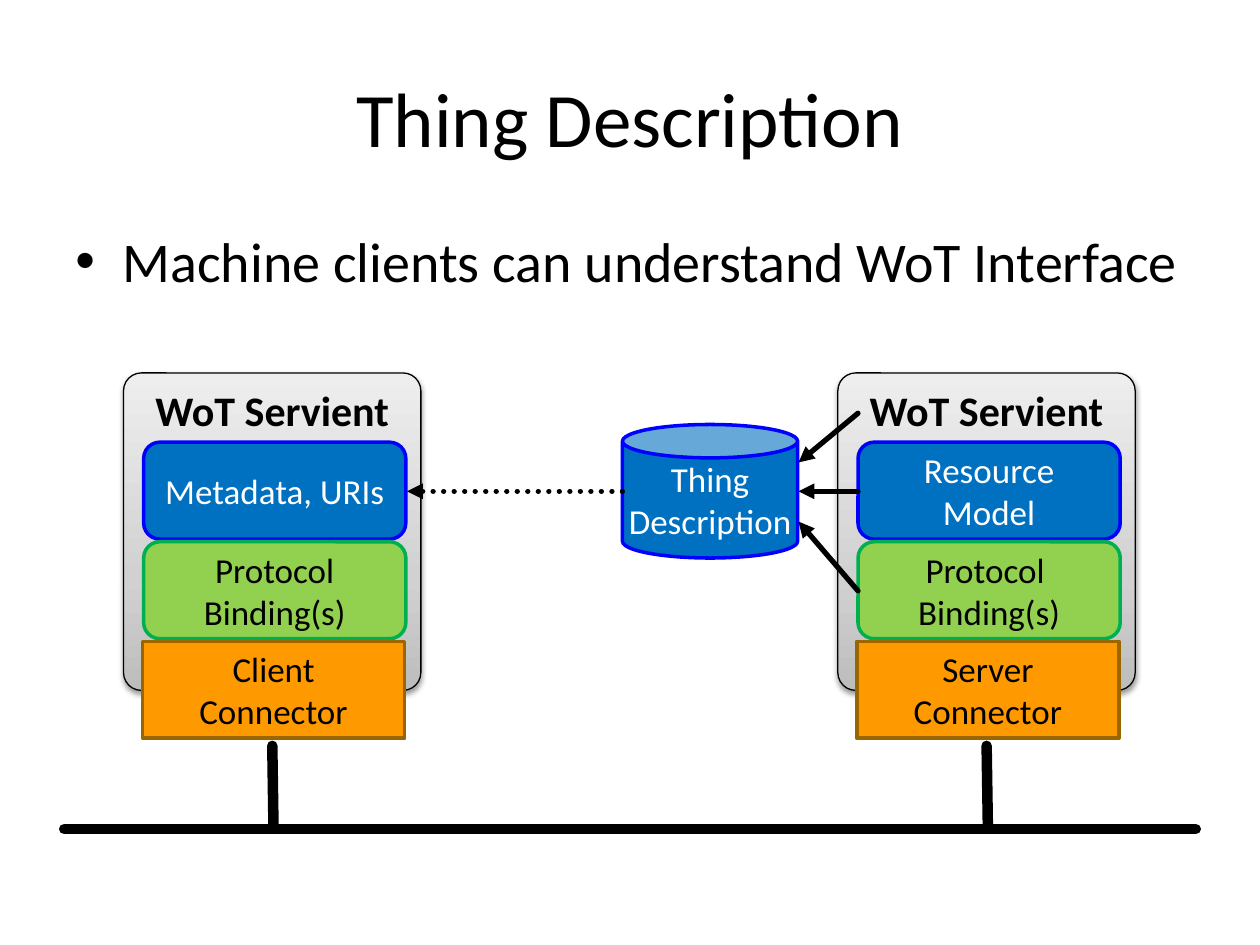
import pptx
import pptx.util
from pptx.dml.color import RGBColor
from pptx.enum.dml import MSO_LINE
from pptx.enum.shapes import MSO_CONNECTOR, MSO_SHAPE
from pptx.enum.text import MSO_ANCHOR, PP_ALIGN
from pptx.oxml import parse_xml
from pptx.oxml.ns import nsdecls
from lxml import etree

Pt = pptx.util.Pt
COLORS = {
    "black": "000000", "white": "FFFFFF",
    "blue": "0070C0", "blue_edge": "0000FF",
    "green": "92D050", "green_edge": "00B050",
    "orange": "FF9900", "orange_edge": "996600",
    "gray_dark": "BDBDBD", "gray_mid": "D1D1D1", "gray_light": "EEEEEE",
}
GRAY_STOPS = ((0, "gray_dark"), (35, "gray_mid"), (100, "gray_light"))
CENTER = PP_ALIGN.CENTER
LAYER_TOP, LAYER_PITCH, LAYER_HEIGHT, LAYER_WIDTH = 39.6, 56.9, 55.4, 149.8


def color(name):
    return RGBColor.from_string(COLORS[name])


def write(shape, text, size, ink="black", align=CENTER, anchor=MSO_ANCHOR.MIDDLE,
          wrap=True, bold=False):
    frame = shape.text_frame
    frame.text = text
    frame.word_wrap = wrap
    frame.vertical_anchor = anchor
    for para in frame.paragraphs:
        para.alignment = align
        for span in para.runs:
            formats = {"name": "Calibri", "size": Pt(size), "bold": bold}
            for key, value in formats.items():
                setattr(span.font, key, value)
            span.font.color.rgb = color(ink)


def add_block(page, kind, box, fill, edge, width=2):
    """Add an outlined shape; a fill of None leaves the fill to the caller."""
    shape = page.shapes.add_shape(kind, *map(Pt, box))
    shape.shadow.inherit = False
    if fill:
        shape.fill.solid()
        shape.fill.fore_color.rgb = color(fill)
    shape.line.color.rgb = color(edge)
    shape.line.width = Pt(width)
    return shape


def add_line(page, start, end, width, arrow=False, dash=None):
    line = page.shapes.add_connector(MSO_CONNECTOR.STRAIGHT, *map(Pt, start + end))
    line.line.color.rgb = color("black")
    line.line.width = Pt(width)
    if dash:
        line.line.dash_style = dash
    stroke = line.line._get_or_add_ln()
    stroke.set("cap", "rnd")
    if arrow:
        stroke.append(parse_xml(f'<a:tailEnd {nsdecls("a")} type="triangle"/>'))
    line._element.spPr.append(parse_xml(f'<a:effectLst {nsdecls("a")}/>'))


def add_gray_gradient_and_shadow(shape):
    stops = "".join(f'<a:gs pos="{place * 1000}"><a:srgbClr val="{COLORS[name]}"/></a:gs>'
                    for place, name in GRAY_STOPS)
    properties = shape._element.spPr
    properties.find("{*}prstGeom").addnext(parse_xml(
        f'<a:gradFill {nsdecls("a")} rotWithShape="1"><a:gsLst>{stops}</a:gsLst>'
        '<a:lin ang="16200000" scaled="0"/></a:gradFill>'))
    properties.find("{*}effectLst").append(parse_xml(
        f'<a:outerShdw {nsdecls("a")} blurRad="{Pt(3.1)}" dist="{Pt(1.6)}" dir="5400000" '
        f'rotWithShape="0"><a:srgbClr val="{COLORS["black"]}"><a:alpha val="38000"/>'
        '</a:srgbClr></a:outerShdw>'))


def add_heading(page, box):
    title = page.shapes.title
    for key, value in zip(("left", "top", "width", "height"), box):
        setattr(title, key, Pt(value))
    write(title, "Thing Description", 44)


def add_bullet(page, box):
    body = page.shapes.add_textbox(*map(Pt, box))
    write(body, "Machine clients can understand WoT Interface", 32,
          align=PP_ALIGN.LEFT, anchor=MSO_ANCHOR.TOP)
    para = body.text_frame.paragraphs[0]
    para.space_before = Pt(6.4)
    properties = para._p.get_or_add_pPr()
    properties.set("marL", str(Pt(27)))
    properties.set("indent", str(Pt(-27)))
    for tag, key, value in (("buFont", "typeface", "Arial"), ("buChar", "char", "•")):
        bullet = etree.SubElement(properties, pptx.oxml.ns.qn(f"a:{tag}"))
        bullet.set(key, value)


def add_servient(page, box, labels):
    """Add a servient panel with three stacked layers and its network stem."""
    left, top, _, _ = box
    panel = add_block(page, MSO_SHAPE.ROUNDED_RECTANGLE, box, None, "black", 0.75)
    panel.adjustments[0] = 0.06
    add_gray_gradient_and_shadow(panel)
    write(panel, "WoT Servient", 24, anchor=MSO_ANCHOR.TOP, wrap=False, bold=True)

    add_line(page, (left + 85.7, top + 259.2), (left + 85, top + 213.1), 6)
    layers = (("blue", "white", 11.5, None), ("green", "black", 11.5, None),
              ("orange", "black", 10.8, 0))
    for row, (label, (fill, ink, inset, rounding)) in enumerate(zip(labels, layers)):
        layer_box = (left + inset, top + LAYER_TOP + row * LAYER_PITCH,
                     LAYER_WIDTH, LAYER_HEIGHT)
        layer = add_block(page, MSO_SHAPE.ROUNDED_RECTANGLE, layer_box, fill, f"{fill}_edge")
        if rounding is not None:
            layer.adjustments[0] = rounding
        write(layer, label, 20, ink)


def add_description_store(page, box, client_edge, server_edge):
    """Add the description cylinder and its arrows to both servients."""
    left, top, width, height = box
    store = add_block(page, MSO_SHAPE.CAN, box, "blue", "blue_edge")
    write(store, "Thing\nDescription", 20, "white", wrap=False)
    middle, right = top + height / 2, left + width + 0.5
    for start_shift, end_shift in ((0, 0), (LAYER_PITCH, 17.3), (-44.6, -16.5)):
        add_line(page, (server_edge, middle + start_shift),
                 (right, middle + end_shift), 3, arrow=True)
    add_line(page, (left, middle), (client_edge, middle), 3, arrow=True,
             dash=MSO_LINE.ROUND_DOT)


def main():
    deck = pptx.Presentation()
    deck.slide_width, deck.slide_height = Pt(720), Pt(540)
    page = deck.slides.add_slide(deck.slide_layouts[5])
    add_heading(page, (36, 21.6, 648, 90))
    add_bullet(page, (36, 126, 648, 356.4))
    add_line(page, (36.7, 473.8), (683.3, 473.8), 6)
    servients = (
        (70.6, ("Metadata, URIs", "Protocol\vBinding(s)", "Client Connector")),
        (478.8, ("Resource\vModel", "Protocol \vBinding(s)", "Server\vConnector")),
    )
    for left, labels in servients:
        add_servient(page, (left, 213.1, 169.9, 181.4), labels)
    add_description_store(page, (355.7, 242.6, 100.1, 76.3), 232.6, 490.3)
    deck.save("out.pptx")


if __name__ == "__main__":
    main()
